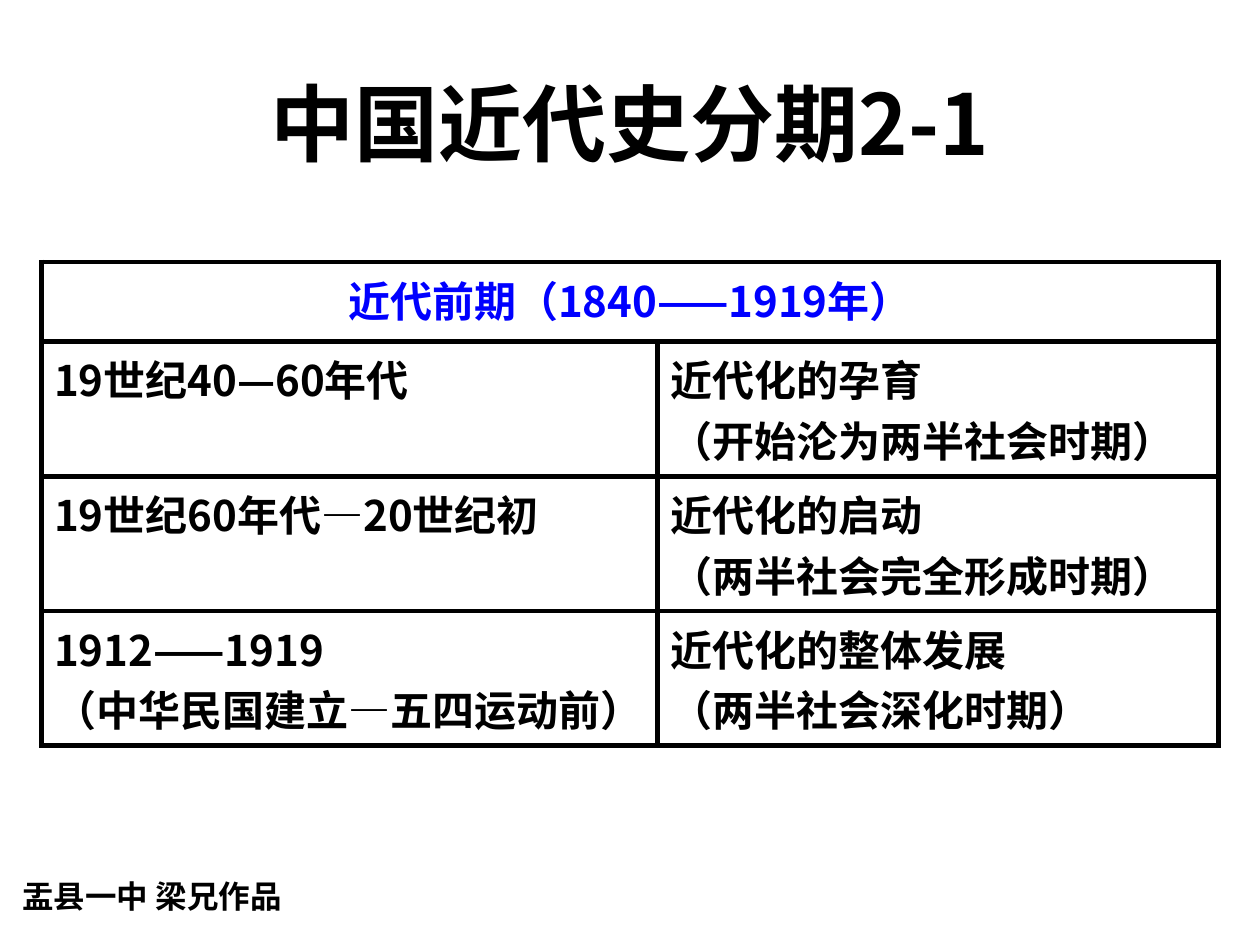
from lxml.etree import SubElement
from pptx import Presentation
from pptx.dml.color import RGBColor as RGB
from pptx.enum.text import MSO_ANCHOR as ANCHOR, PP_ALIGN as ALIGN
from pptx.oxml.ns import qn
from pptx.util import Inches, Pt

TITLE = "中国近代史分期2-1"
HEADER = "近代前期（1840——1919年）"
PERIODS = [
    (["19世纪40—60年代"], ["近代化的孕育", "（开始沦为两半社会时期）"]),
    (["19世纪60年代—20世纪初"], ["近代化的启动", "（两半社会完全形成时期）"]),
    (["1912——1919", "（中华民国建立—五四运动前）"],
     ["近代化的整体发展", "（两半社会深化时期）"]),
]
CREDIT = "盂县一中 梁兄作品"
COLORS = {"text": "000000", "header": "0000FF", "paper": "FFFFFF", "border": "000000"}
HEAD_FONT, BODY_FONT = "Noto Sans CJK JP", "Noto Sans CJK SC"
COLS = [4.89, 4.45]
HEAD_H, ROW_H = 0.63, 1.07
BORDER = 3


def write(tf, lines, size, color="text", align=ALIGN.LEFT, font=BODY_FONT):
    tf.text = "\n".join(lines)
    tf.word_wrap = True
    for p in tf.paragraphs:
        p.alignment = align
        p.font.size, p.font.bold, p.font.name = Pt(size), True, font
        p.font.color.rgb = RGB.from_string(COLORS[color])
        for r in p.runs:
            SubElement(r._r.get_or_add_rPr(), qn("a:ea"), typeface=font)


def add_text(slide, box, text, size, **style):
    tf = slide.shapes.add_textbox(*map(Inches, box)).text_frame
    write(tf, [text], size, **style)
    return tf


def style_cell(cell):
    pr = cell._tc.get_or_add_tcPr()
    for side in ("lnL", "lnR", "lnT", "lnB"):
        ln = SubElement(pr, qn(f"a:{side}"), w=str(Pt(BORDER)))
        fill = SubElement(ln, qn("a:solidFill"))
        SubElement(fill, qn("a:srgbClr"), val=COLORS["border"])
    cell.fill.solid()
    cell.fill.fore_color.rgb = RGB.from_string(COLORS["paper"])


def add_periods(slide):
    n = len(PERIODS)
    box = (0.33, 2.08, sum(COLS), HEAD_H + n * ROW_H)
    table = slide.shapes.add_table(n + 1, len(COLS), *map(Inches, box)).table
    table.first_row = table.horz_banding = False
    for col, width in zip(table.columns, COLS):
        col.width = Inches(width)
    for row, height in zip(table.rows, [HEAD_H] + [ROW_H] * n):
        row.height = Inches(height)
    for cell in table.iter_cells():
        style_cell(cell)
    table.cell(0, 0).merge(table.cell(0, len(COLS) - 1))
    write(table.cell(0, 0).text_frame, [HEADER], 24, "header", ALIGN.CENTER)
    for i, period in enumerate(PERIODS, 1):
        for j, lines in enumerate(period):
            write(table.cell(i, j).text_frame, lines, 24)


def main():
    prs = Presentation()
    prs.slide_width, prs.slide_height = Inches(10), Inches(7.5)
    slide = prs.slides.add_slide(prs.slide_layouts[6])
    tf = add_text(slide, (0.5, 0.34, 9, 1.25), TITLE, 48,
                  align=ALIGN.CENTER, font=HEAD_FONT)
    tf.vertical_anchor = ANCHOR.MIDDLE
    add_periods(slide)
    add_text(slide, (0.08, 6.91, 2.33, 0.42), CREDIT, 18)
    prs.save("out.pptx")


if __name__ == "__main__":
    main()
